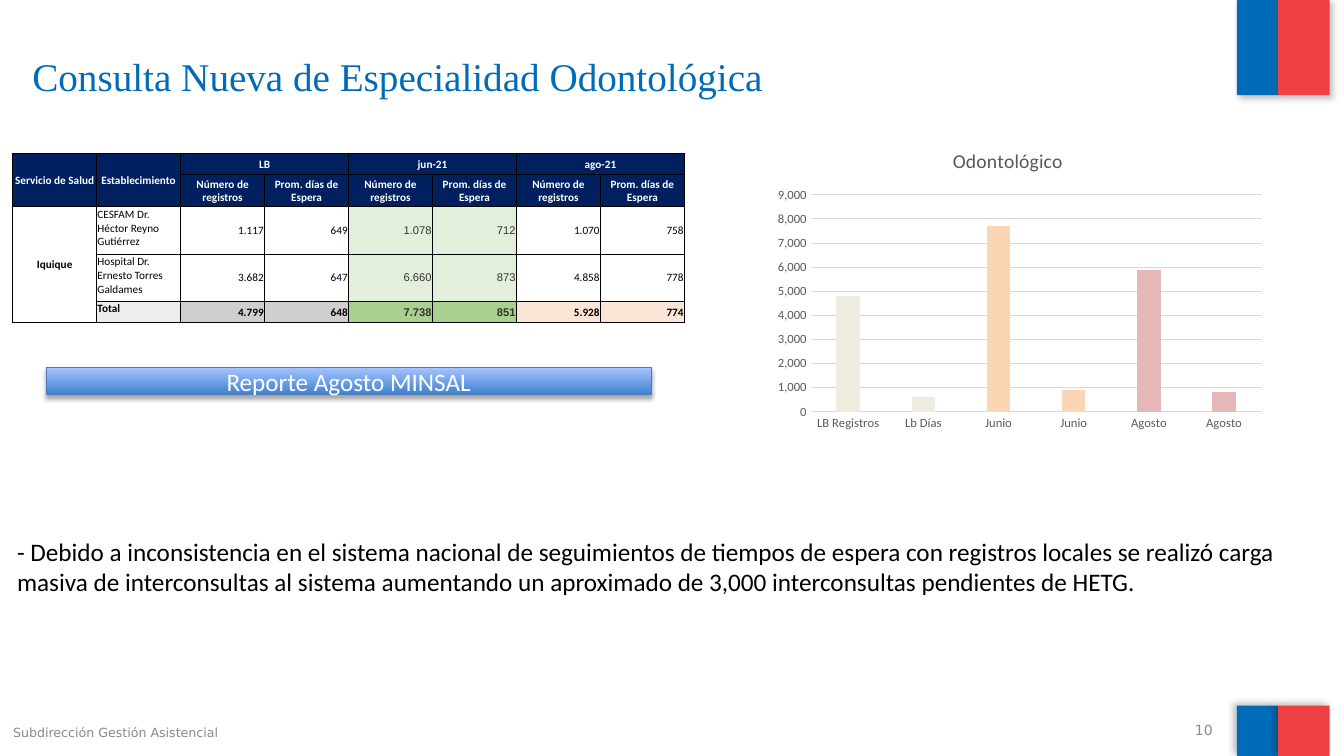
from lxml import etree
from pptx import Presentation
from pptx.chart.data import CategoryChartData
from pptx.dml.color import RGBColor
from pptx.enum.chart import XL_CHART_TYPE, XL_TICK_MARK
from pptx.enum.shapes import MSO_SHAPE
from pptx.enum.text import MSO_ANCHOR, PP_ALIGN
from pptx.oxml import parse_xml
from pptx.oxml.ns import nsdecls, qn
from pptx.util import Cm, Pt

RECTANGLE = MSO_SHAPE.RECTANGLE
TOP, MIDDLE = MSO_ANCHOR.TOP, MSO_ANCHOR.MIDDLE
LEFT, CENTER, RIGHT = PP_ALIGN.LEFT, PP_ALIGN.CENTER, PP_ALIGN.RIGHT
CLUSTERED, NO_TICK = XL_CHART_TYPE.COLUMN_CLUSTERED, XL_TICK_MARK.NONE

BLUE = RGBColor(0x00, 0x6C, 0xB7)
RED = RGBColor(0xEF, 0x41, 0x44)
WHITE = RGBColor(0xFF, 0xFF, 0xFF)
BLACK = RGBColor(0x00, 0x00, 0x00)
DARK_GREY = RGBColor(0x33, 0x33, 0x33)
CHART_GREY = RGBColor(0x59, 0x59, 0x59)
FOOTER_GREY = RGBColor(0x89, 0x89, 0x89)
GRID_GREY = RGBColor(0xD9, 0xD9, 0xD9)
NAVY = RGBColor(0x00, 0x20, 0x60)
PALE_GREEN = RGBColor(0xE2, 0xEF, 0xDA)
GREEN = RGBColor(0xA9, 0xD0, 0x8E)
PALE_GREY = RGBColor(0xED, 0xED, 0xED)
GREY = RGBColor(0xD0, 0xCE, 0xCE)
PEACH = RGBColor(0xFC, 0xE4, 0xD6)
BANNER_DARK = RGBColor(0x3F, 0x80, 0xCE)
BANNER_LIGHT = RGBColor(0xA4, 0xC4, 0xFF)
BANNER_LINE = RGBColor(0x4B, 0x7E, 0xBC)
SERIES_BLUE = RGBColor(0x4F, 0x81, 0xBD)
CREAM = RGBColor(0xEE, 0xEC, 0xE1)
ORANGE = RGBColor(0xFC, 0xD5, 0xB5)
PINK = RGBColor(0xE6, 0xB9, 0xB8)


def write_text(frame, text, size, font, color, align=LEFT, anchor=TOP, bold=False):
    frame.word_wrap = True
    frame.vertical_anchor = anchor
    para = frame.paragraphs[0]
    para.alignment = align
    span = para.add_run()
    span.text = text
    for name, value in {"size": Pt(size), "name": font, "bold": bold}.items():
        setattr(span.font, name, value)
    span.font.color.rgb = color


def add_box(left, top, width, height, opacity, blur, distance, angle):
    box = page.shapes.add_shape(RECTANGLE, Cm(left), Cm(top), Cm(width), Cm(height))
    box.shadow.inherit = False
    effects = box._element.spPr.find(qn("a:effectLst"))
    effects.append(parse_xml(
        f'<a:outerShdw {nsdecls("a")} blurRad="{Pt(blur)}" dist="{Pt(distance)}" '
        f'dir="{angle * 60000}" algn="ctr" rotWithShape="0"><a:srgbClr val="000000">'
        f'<a:alpha val="{opacity * 1000}"/></a:srgbClr></a:outerShdw>'))
    return box


deck = Presentation()
deck.slide_width, deck.slide_height = Cm(33.87), Cm(19.05)
page = deck.slides.add_slide(deck.slide_layouts[5])

for top, height, angle in [(0, 2.4, 45), (17.78, 1.27, 215)]:
    for left, width, color in [(31.17, 1.04, BLUE), (32.21, 1.3, RED)]:
        flag = add_box(left, top, width, height, 25, 5, 3, angle)
        flag.fill.solid()
        flag.fill.fore_color.rgb = color
        flag.line.fill.background()

title = page.shapes.title
title_place = {"left": 0.56, "top": 1.19, "width": 30.25, "height": 2.18}
for name, value in title_place.items():
    setattr(title, name, Cm(value))
write_text(title.text_frame, "Consulta Nueva de Especialidad Odontológica",
           28, "Times New Roman", BLUE)

body = ("- Debido a inconsistencia en el sistema nacional de seguimientos de tiempos de "
        "espera con registros locales se realizó carga masiva de interconsultas al sistema "
        "aumentando un aproximado de 3,000 interconsultas pendientes de HETG.")
texts = [
    (0.08, 18.14, 10.72, 0.69, "Subdirección Gestión Asistencial", 9, "DejaVu Sans",
     FOOTER_GREY, LEFT, TOP),
    (22.91, 18.14, 7.9, 0.53, "10", 10, "DejaVu Sans", FOOTER_GREY, RIGHT, MIDDLE),
    (0.18, 13.39, 32.46, 1.8, body, 18, "Calibri", BLACK, LEFT, TOP),
]
for left, top, width, height, *content in texts:
    box = page.shapes.add_textbox(Cm(left), Cm(top), Cm(width), Cm(height))
    write_text(box.text_frame, *content)

banner = add_box(1.17, 9.26, 15.24, 0.69, 35, 3.1, 1.8, 90)
banner.fill.gradient()
banner.fill.gradient_angle = 90
for stop, color in zip(banner.fill.gradient_stops, [BANNER_DARK, BANNER_LIGHT]):
    stop.color.rgb = color
banner.line.color.rgb = BANNER_LINE
banner.line.width = Pt(0.75)
write_text(banner.text_frame, "Reporte Agosto MINSAL", 18, "Calibri", WHITE, CENTER, MIDDLE)

rows = [
    ["Servicio de Salud", "Establecimiento", "LB", "", "jun-21", "", "ago-21", ""],
    ["", ""] + ["Número de registros", "Prom. días de Espera"] * 3,
    ["Iquique", "CESFAM Dr. Héctor Reyno Gutiérrez",
     "1.117", "649", "1.078", "712", "1.070", "758"],
    ["", "Hospital Dr. Ernesto Torres Galdames",
     "3.682", "647", "6.660", "873", "4.858", "778"],
    ["", "Total", "4.799", "648", "7.738", "851", "5.928", "774"],
]
data_fills = [None] * 4 + [PALE_GREEN] * 2 + [None] * 2
total_fills = [None, PALE_GREY, GREY, GREY, GREEN, GREEN, PEACH, PEACH]
fills = [[NAVY] * 8] * 2 + [data_fills] * 2 + [total_fills]
table_width = 16.93
frame = page.shapes.add_table(5, 8, Cm(0.32), Cm(3.87), Cm(table_width), Cm(4.25))
table = frame.table
table.first_row = table.horz_banding = False
for column in table.columns:
    column.width = Cm(table_width / 8)
for row, height in zip(table.rows, [0.53, 0.81, 1.19, 1.19, 0.53]):
    row.height = Cm(height)
for first, last in [((0, 0), (1, 0)), ((0, 1), (1, 1)), ((0, 2), (0, 3)),
                    ((0, 4), (0, 5)), ((0, 6), (0, 7)), ((2, 0), (4, 0))]:
    table.cell(*first).merge(table.cell(*last))

margins = {"margin_left": 0.02, "margin_right": 0.02, "margin_top": 0.02, "margin_bottom": 0}
for r, values in enumerate(rows):
    for c, text in enumerate(values):
        cell = table.cell(r, c)
        for name, value in margins.items():
            setattr(cell, name, Cm(value))
        properties = cell._tc.get_or_add_tcPr()
        for side, outer in {"L": c == 0, "R": False, "T": r == 0, "B": False}.items():
            border = etree.SubElement(properties, qn(f"a:ln{side}"),
                                      w=str(Pt(1 if outer else 0.5)))
            paint = etree.SubElement(border, qn("a:solidFill"))
            etree.SubElement(paint, qn("a:srgbClr"), val=str(BLACK))
        if fills[r][c]:
            cell.fill.solid()
            cell.fill.fore_color.rgb = fills[r][c]
        else:
            cell.fill.background()
        if not text:
            continue
        header = r < 2
        june = not header and c in (4, 5)
        name_cell = not header and c == 1
        align = CENTER if header or c == 0 else LEFT if name_cell else RIGHT
        color = WHITE if header else DARK_GREY if june else BLACK
        write_text(cell.text_frame, text, 8, "Arial" if june else "Calibri", color, align,
                   bold=header or c == 0 or r == 4)
        cell.vertical_anchor = TOP if name_cell else MIDDLE

data = CategoryChartData(number_format="#,##0")
data.categories = ["LB Registros", "Lb Días", "Junio", "Junio", "Agosto", "Agosto"]
data.add_series("Series 1", [4800, 600, 7700, 900, 5900, 800])
chart = page.shapes.add_chart(CLUSTERED, Cm(19.35), Cm(3.38), Cm(12.7), Cm(7.62), data).chart
chart.has_legend = False
chart.font.size, chart.font.name = Pt(10), "Calibri"
chart.font.color.rgb = BLACK
chart.has_title = True
write_text(chart.chart_title.text_frame, "Odontológico", 14, "Calibri", CHART_GREY, CENTER)
title_layout = chart.chart_title._element.find(qn("c:layout"))
manual = etree.SubElement(title_layout, qn("c:manualLayout"))
for tag, value in {"xMode": "edge", "yMode": "edge", "x": "0.36", "y": "0.03"}.items():
    etree.SubElement(manual, qn(f"c:{tag}"), val=value)

plot = chart.plots[0]
plot.gap_width, plot.overlap, plot.vary_by_categories = 219, -27, False
series = plot.series[0]
series.format.fill.solid()
series.format.fill.fore_color.rgb = SERIES_BLUE
for index, color in enumerate([CREAM, CREAM, ORANGE, ORANGE, PINK, PINK]):
    fill = series.points[index].format.fill
    fill.solid()
    fill.fore_color.rgb = color

for axis in (chart.category_axis, chart.value_axis):
    axis.major_tick_mark = axis.minor_tick_mark = NO_TICK
    axis.tick_labels.font.size, axis.tick_labels.font.name = Pt(9), "Calibri"
    axis.tick_labels.font.color.rgb = CHART_GREY
scale = {"minimum_scale": 0, "maximum_scale": 9000, "major_unit": 1000,
         "has_major_gridlines": True}
for name, value in scale.items():
    setattr(chart.value_axis, name, value)
chart.value_axis.format.line.fill.background()
for line in (chart.category_axis.format.line, chart.value_axis.major_gridlines.format.line):
    line.color.rgb = GRID_GREY
    line.width = Pt(0.75)

deck.save("out.pptx")
